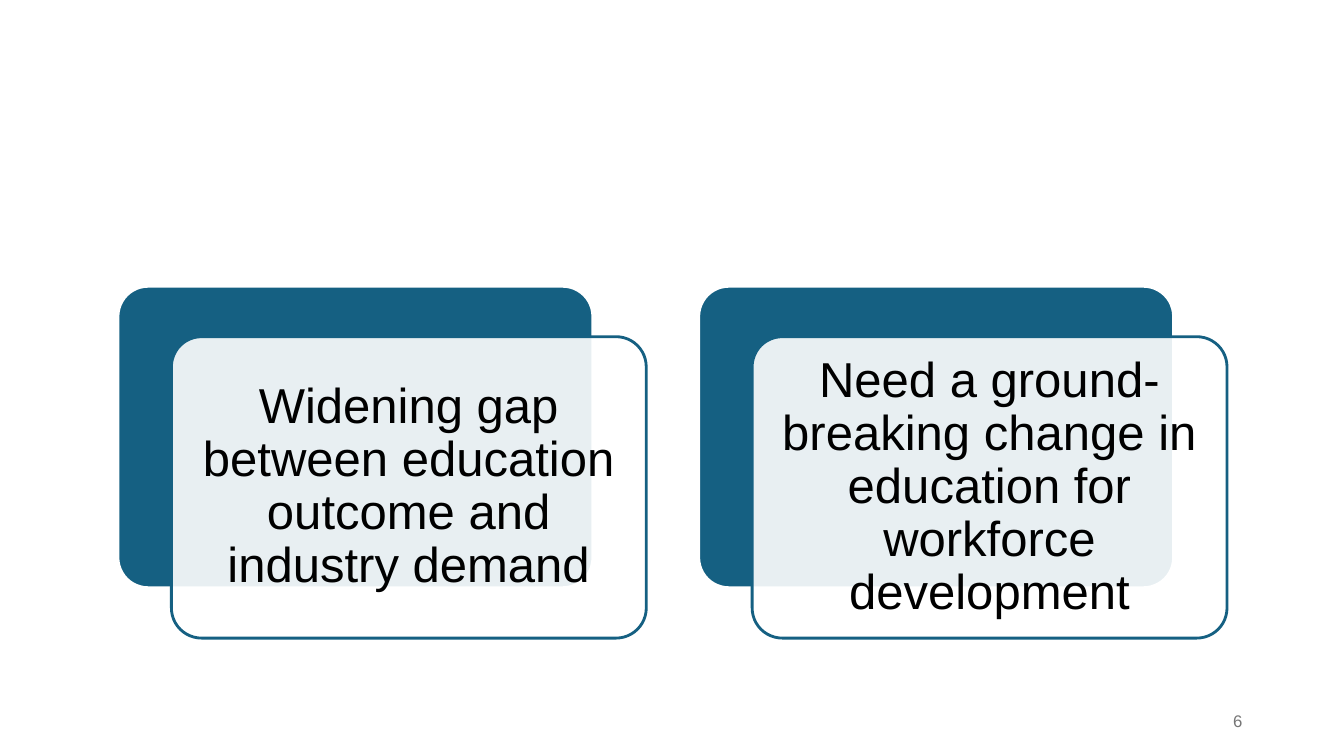
from dataclasses import dataclass

import pptx
import pptx.dml.color
import pptx.enum.shapes
import pptx.enum.text
import pptx.oxml
import pptx.oxml.ns
import pptx.util
from pptx.util import Inches

ALIGN = pptx.enum.text.PP_ALIGN


@dataclass(frozen=True)
class Theme:
    font: str = "Arial"
    teal: str = "156082"
    white: str = "FFFFFF"
    black: str = "000000"
    gray: str = "757575"
    message_size: int = 35
    number_size: int = 12
    line_width: int = 2


THEME = Theme()
CARD_WIDTH, CARD_HEIGHT = 4.71, 2.99
CARD_LEFT, CARD_TOP, CARD_PITCH = 1.17, 2.84, 5.76
FRONT_DX, FRONT_DY = 0.53, 0.5
MESSAGES = (
    "Widening gap between education outcome and industry demand",
    "Need a ground-breaking change in education for workforce development",
)


def rgb(value):
    return pptx.dml.color.RGBColor.from_string(value)


def set_opacity(sp, percent):
    """Make the solid fill of a shape partly transparent."""
    color = sp.fill._xPr.find(".//" + pptx.oxml.ns.qn("a:srgbClr"))
    alpha = pptx.oxml.parse_xml(
        f'<a:alpha {pptx.oxml.ns.nsdecls("a")} val="{percent * 1000}"/>')
    color.append(alpha)


def add_card(s, left, top, fill, line):
    sp = s.shapes.add_shape(
        pptx.enum.shapes.MSO_SHAPE.ROUNDED_RECTANGLE,
        Inches(left), Inches(top), Inches(CARD_WIDTH), Inches(CARD_HEIGHT))
    sp.adjustments[0] = 0.1
    sp.shadow.inherit = False
    sp.fill.solid()
    sp.fill.fore_color.rgb = rgb(fill)
    sp.line.color.rgb = rgb(line)
    sp.line.width = pptx.util.Pt(THEME.line_width)
    return sp


def write_text(sp, text, size, color, align, inset_x, inset_y, spacing=1.0):
    tf = sp.text_frame
    frame_format = {
        "word_wrap": True,
        "vertical_anchor": pptx.enum.text.MSO_ANCHOR.MIDDLE,
        "margin_left": Inches(inset_x),
        "margin_right": Inches(inset_x),
        "margin_top": Inches(inset_y),
        "margin_bottom": Inches(inset_y),
    }
    for name, value in frame_format.items():
        setattr(tf, name, value)
    p = tf.paragraphs[0]
    p.alignment = align
    p.line_spacing = spacing
    r = p.add_run()
    r.text = text
    for name, value in {"name": THEME.font, "size": pptx.util.Pt(size)}.items():
        setattr(r.font, name, value)
    r.font.color.rgb = rgb(color)


def add_message(s, left, top, text):
    """Add a teal card with a translucent text card offset in front of it."""
    add_card(s, left, top, THEME.teal, THEME.white)
    front = add_card(s, left + FRONT_DX, top + FRONT_DY, THEME.white, THEME.teal)
    set_opacity(front, 90)
    write_text(front, text, THEME.message_size, THEME.black,
               ALIGN.CENTER, 0.15, 0.15, 0.9)


def add_slide_number(s, number):
    sp = s.shapes.add_textbox(Inches(9.42), Inches(6.95), Inches(3), Inches(0.4))
    write_text(sp, number, THEME.number_size, THEME.gray, ALIGN.RIGHT, 0.1, 0.05)


def main():
    prs = pptx.Presentation()
    prs.slide_width, prs.slide_height = Inches(13.33), Inches(7.5)
    s = prs.slides.add_slide(prs.slide_layouts[6])
    for i, message in enumerate(MESSAGES):
        add_message(s, CARD_LEFT + i * CARD_PITCH, CARD_TOP, message)
    add_slide_number(s, "6")
    prs.save("out.pptx")


if __name__ == "__main__":
    main()
